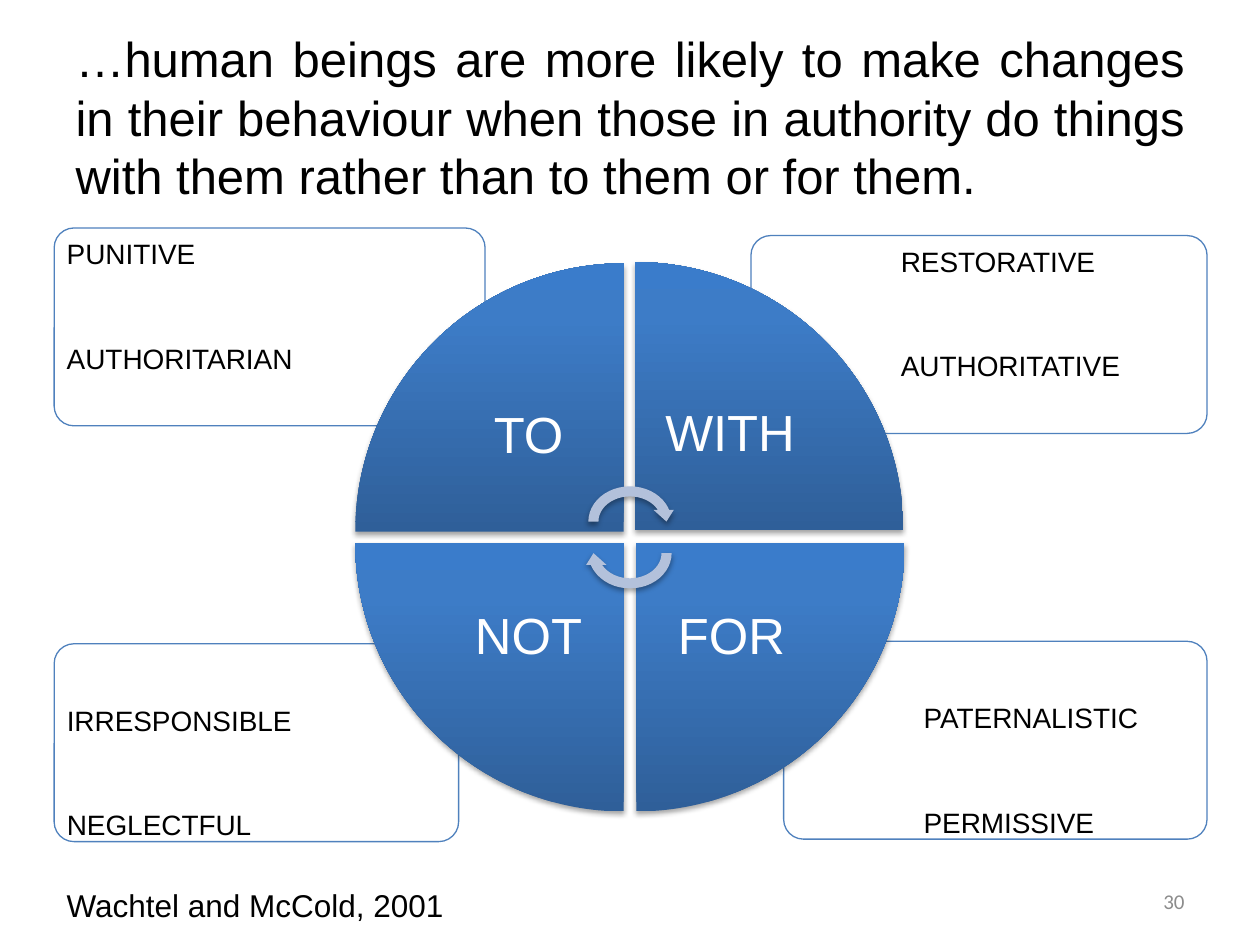
"""Build the slide on the four styles of authority."""
from lxml.etree import SubElement
from pptx import Presentation
from pptx.dml.color import RGBColor
from pptx.enum.shapes import MSO_SHAPE
from pptx.enum.text import MSO_ANCHOR, PP_ALIGN
from pptx.oxml import parse_xml
from pptx.oxml.ns import nsdecls, qn
from pptx.util import Inches, Pt

HEX = {"black": "000000", "white": "FFFFFF", "edge": "4F81BD",
       "arrow": "B3C1DB", "grey": "8C8C8C"}
GRADE = [(0, "2F5F99"), (80, "3D7CC7"), (100, "3A7CCB")]
SIDE, WORD = 2.13, 1.51
QUOTE = ("…human beings are more likely to make changes in their behaviour "
         "when those in authority do things with them rather than to them "
         "or for them.")
CARDS = [
    ((6.22, 5.09, 3.36), (7.26, 5.52, 2.28), ["PATERNALISTIC", "PERMISSIVE"]),
    ((0.43, 5.11, 3.21), (0.46, 5.54, 2.18), ["IRRESPONSIBLE", "NEGLECTFUL"]),
    ((5.96, 1.87, 3.62), (7.08, 1.9, 2.46), ["RESTORATIVE", "AUTHORITATIVE"]),
    ((0.43, 1.81, 3.42), (0.46, 1.84, 2.33), ["PUNITIVE", "AUTHORITARIAN"]),
]
WEDGES = [("TO", 2.82, 2.09, 0), ("WITH", 5.04, 2.08, 90),
          ("FOR", 5.05, 4.31, 180), ("NOT", 2.82, 4.31, 270)]


def color(name):
    return RGBColor.from_string(HEX[name])


def box(slide, *at):
    return slide.shapes.add_textbox(*map(Inches, at))


def write(shape, *lines, size=16, ink="black", font="Arial",
          align=PP_ALIGN.LEFT, anchor=MSO_ANCHOR.TOP, inset=None,
          pitch=None, gap=0):
    frame = shape.text_frame
    frame.word_wrap = True
    frame.vertical_anchor = anchor
    if inset is not None:
        frame.margin_left = frame.margin_right = Inches(inset)
        frame.margin_top = frame.margin_bottom = Inches(inset)
    frame.text = "\n".join(lines)
    for para in frame.paragraphs:
        para.alignment = align
        para.line_spacing = pitch
        para.space_after = Pt(gap)
        face = para.runs[0].font
        face.name, face.size = font, Pt(size)
        face.color.rgb = color(ink)


def shade(shape):
    props = shape._element.spPr
    for old in props.findall(qn("a:effectLst")):
        props.remove(old)
    props.append(parse_xml(
        f'<a:effectLst {nsdecls("a")}><a:outerShdw blurRad="{Pt(3.1)}" '
        f'dist="{Pt(1.8)}" dir="5400000" rotWithShape="0">'
        '<a:srgbClr val="000000"><a:alpha val="35000"/></a:srgbClr>'
        '</a:outerShdw></a:effectLst>'))


def grade(shape):
    stops = "".join(f'<a:gs pos="{pos * 1000}"><a:srgbClr val="{tint}"/></a:gs>'
                    for pos, tint in GRADE)
    fill = parse_xml(
        f'<a:gradFill {nsdecls("a")} rotWithShape="0"><a:gsLst>{stops}</a:gsLst>'
        '<a:lin ang="16200000" scaled="0"/></a:gradFill>')
    shape._element.spPr.find(qn("a:prstGeom")).addnext(fill)


def form(slide, kind, at, turn=0):
    shape = slide.shapes.add_shape(kind, *map(Inches, at))
    shape.rotation = turn
    shape.shadow.inherit = False
    shape.line.fill.background()
    return shape


def card(slide, frame, label, lines):
    shape = form(slide, MSO_SHAPE.ROUNDED_RECTANGLE, (*frame, 1.57))
    shape.adjustments[0] = 0.1
    shape.fill.solid()
    shape.fill.fore_color.rgb = color("white")
    tint = shape._element.spPr.find(qn("a:solidFill"))[0]
    SubElement(tint, qn("a:alpha")).set("val", "90000")
    shape.line.color.rgb = color("edge")
    shape.line.width = Pt(0.75)
    write(box(slide, *label, 1.11), *lines, inset=0.07, pitch=0.9, gap=42.5)


def wedge(slide, text, left, top, turn):
    shape = form(slide, MSO_SHAPE.PIE_WEDGE, (left, top, SIDE, SIDE), turn)
    grade(shape)
    shade(shape)
    shift = SIDE - WORD
    x = left + shift if turn in (0, 270) else left
    y = top + shift if turn in (0, 90) else top
    write(box(slide, x, y, WORD, WORD), text, size=29, ink="white",
          align=PP_ALIGN.CENTER, anchor=MSO_ANCHOR.MIDDLE, inset=0.23, pitch=0.9)


def arrow(slide, top, turn):
    shape = form(slide, MSO_SHAPE.CIRCULAR_ARROW, (4.63, top, 0.74, 0.64), turn)
    shape.fill.solid()
    shape.fill.fore_color.rgb = color("arrow")
    shade(shape)


def main():
    deck = Presentation()
    deck.slide_width, deck.slide_height = Inches(10), Inches(7.5)
    slide = deck.slides.add_slide(deck.slide_layouts[5])
    title = slide.shapes.title
    title.left, title.top = Inches(0.5), Inches(0.3)
    title.width, title.height = Inches(9), Inches(1.25)
    write(title, QUOTE, size=28, align=PP_ALIGN.JUSTIFY, anchor=MSO_ANCHOR.MIDDLE)
    for item in CARDS:
        card(slide, *item)
    for item in WEDGES:
        wedge(slide, *item)
    arrow(slide, 3.82, 0)
    arrow(slide, 4.07, 180)
    write(box(slide, 0.43, 6.98, 3.39, 0.4), "Wachtel and McCold, 2001", size=18)
    write(box(slide, 7.17, 6.95, 2.33, 0.4), "30", size=12, ink="grey",
          font="Calibri", align=PP_ALIGN.RIGHT, anchor=MSO_ANCHOR.MIDDLE)
    deck.save("out.pptx")


if __name__ == "__main__":
    main()
